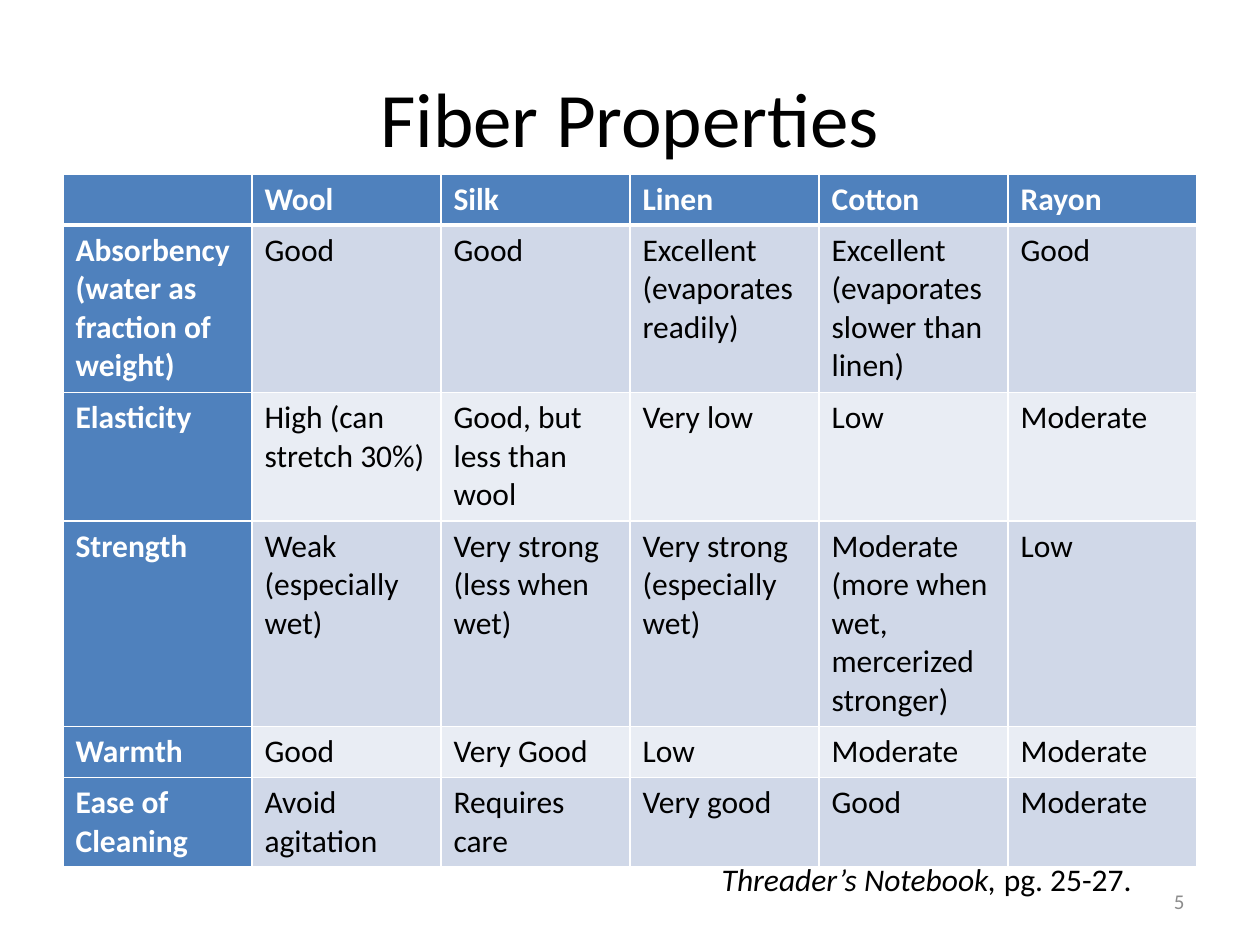
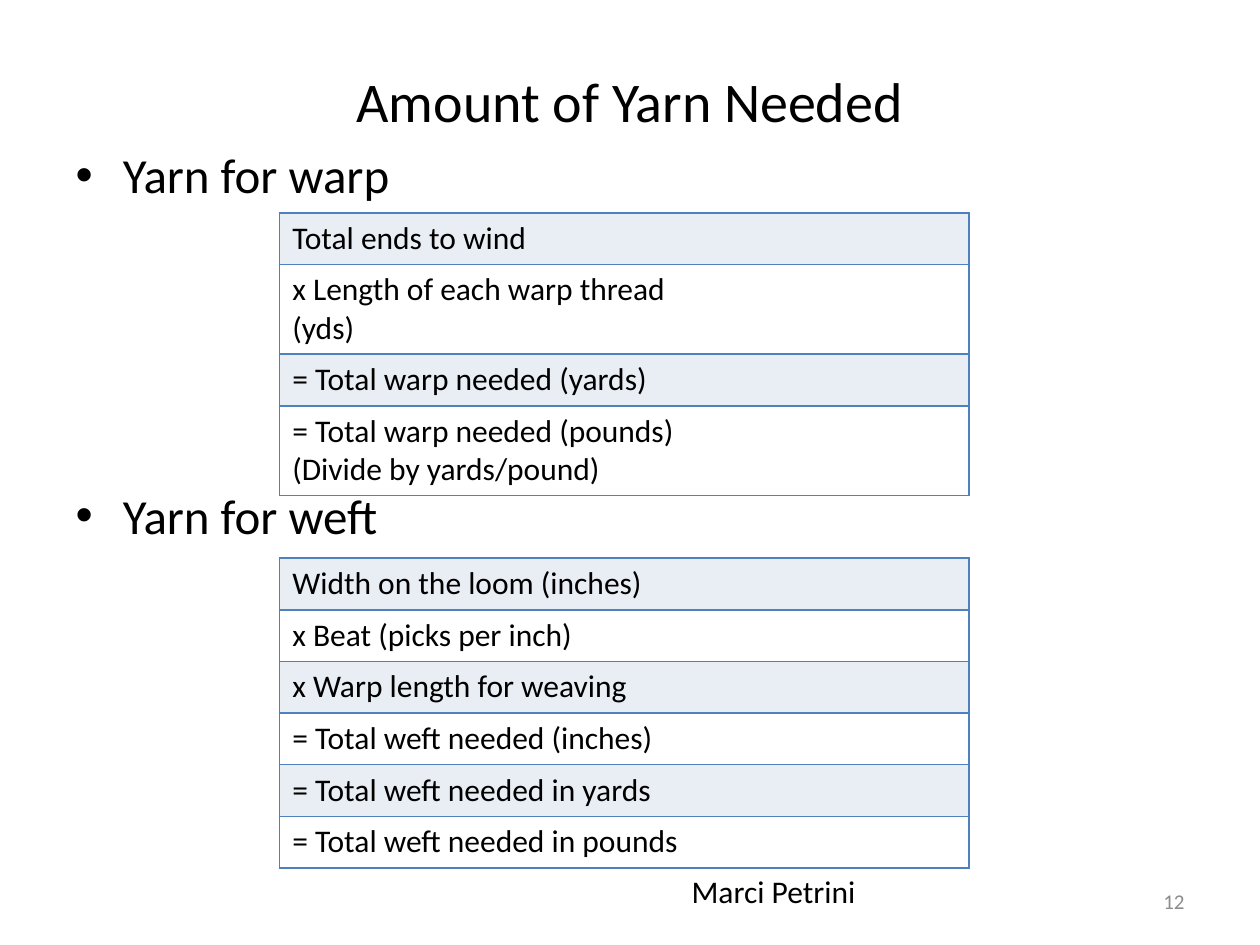
from dataclasses import dataclass

from lxml.etree import SubElement
from pptx import Presentation
from pptx.dml.color import RGBColor
from pptx.enum.text import MSO_ANCHOR, MSO_AUTO_SIZE, PP_ALIGN
from pptx.oxml.ns import qn
from pptx.slide import Slide
from pptx.table import Table, _Cell
from pptx.util import Emu, Pt

FONT = "Calibri"
BLACK = RGBColor(0x00, 0x00, 0x00)
WHITE = RGBColor(0xFF, 0xFF, 0xFF)
GRAY = RGBColor(0x8C, 0x8C, 0x8C)
BLUE = RGBColor(0x4F, 0x81, 0xBD)
BAND_DARK = RGBColor(0xD0, 0xD8, 0xE8)
BAND_LIGHT = RGBColor(0xE9, 0xED, 0xF4)

EMU_PER_PX = 9144
SLIDE_W, SLIDE_H = 1000, 750


def px(n: int) -> Emu:
    return Emu(n * EMU_PER_PX)


@dataclass(frozen=True)
class Box:
    left: int
    top: int
    width: int
    height: int

    def emu(self) -> tuple[Emu, ...]:
        return tuple(px(n) for n in (self.left, self.top, self.width, self.height))


@dataclass(frozen=True)
class Grid:
    left: int
    top: int
    cols: tuple[int, ...]
    rows: tuple[int, ...]


@dataclass(frozen=True)
class Worksheet:
    grid: Grid
    steps: tuple[str, ...]


PAGE_NUMBER_BOX = Box(717, 695, 233, 40)

PROPERTIES_GRID = Grid(50, 138, (150,) * 6, (40, 133, 102, 163, 40, 71))
PROPERTIES = (
    ("", "Wool", "Silk", "Linen", "Cotton", "Rayon"),
    ("Absorbency (water as fraction of weight)", "Good", "Good",
     "Excellent (evaporates readily)",
     "Excellent (evaporates slower than linen)", "Good"),
    ("Elasticity", "High (can stretch 30%)", "Good, but less than wool",
     "Very low", "Low", "Moderate"),
    ("Strength", "Weak (especially wet)", "Very strong (less when wet)",
     "Very strong (especially wet)",
     "Moderate (more when wet, mercerized stronger)", "Low"),
    ("Warmth", "Good", "Very Good", "Low", "Moderate", "Moderate"),
    ("Ease of Cleaning", "Avoid agitation", "Requires care", "Very good",
     "Good", "Moderate"),
)

WORKSHEETS = (
    Worksheet(
        Grid(222, 169, (342, 205), (41, 71, 41, 71)),
        ("Total ends to wind",
         "x Length of each warp thread (yds)",
         "= Total warp needed (yards)",
         "= Total warp needed (pounds) (Divide by yards/pound)"),
    ),
    Worksheet(
        Grid(222, 443, (347, 200), (41,) * 6),
        ("Width on the loom (inches)",
         "x Beat (picks per inch)",
         "x Warp length for weaving",
         "= Total weft needed (inches)",
         "= Total weft needed in yards",
         "= Total weft needed in pounds"),
    ),
)


def style(p, size: int, color: RGBColor = BLACK, bold: bool | None = None) -> None:
    p.font.name = FONT
    p.font.size = Pt(size)
    p.font.bold = bold
    p.font.color.rgb = color


def place(sp, box: Box) -> None:
    sp.left, sp.top, sp.width, sp.height = box.emu()


def set_title(s: Slide, text: str, box: Box, size: int) -> None:
    sp = s.shapes.title
    place(sp, box)
    tf = sp.text_frame
    tf.text = text
    tf.auto_size = MSO_AUTO_SIZE.NONE
    tf.vertical_anchor = MSO_ANCHOR.MIDDLE
    p = tf.paragraphs[0]
    p.alignment = PP_ALIGN.CENTER
    style(p, size)


def add_text(s: Slide, box: Box, runs: tuple[tuple[str, bool], ...],
             size: int = 18, color: RGBColor = BLACK):
    tf = s.shapes.add_textbox(*box.emu()).text_frame
    tf.word_wrap = True
    p = tf.paragraphs[0]
    for text, italic in runs:
        r = p.add_run()
        r.text = text
        r.font.italic = italic
        style(r, size, color)
    return tf


def add_page_number(s: Slide, number: int) -> None:
    tf = add_text(s, PAGE_NUMBER_BOX, ((str(number), False),), 12, GRAY)
    tf.vertical_anchor = MSO_ANCHOR.MIDDLE
    tf.paragraphs[0].alignment = PP_ALIGN.RIGHT


def add_grid(s: Slide, grid: Grid) -> Table:
    box = Box(grid.left, grid.top, sum(grid.cols), sum(grid.rows))
    table = s.shapes.add_table(len(grid.rows), len(grid.cols), *box.emu()).table
    table.first_row = table.horz_banding = False
    for col, width in zip(table.columns, grid.cols):
        col.width = px(width)
    for row, height in zip(table.rows, grid.rows):
        row.height = px(height)
    return table


def fill_cell(cell: _Cell, text: str, fill: RGBColor, color: RGBColor,
              bold: bool, line: RGBColor, widths: dict[str, int]) -> None:
    cell.text = text
    style(cell.text_frame.paragraphs[0], 18, color, bold)
    tc_pr = cell._tc.get_or_add_tcPr()
    for side in "LRTB":
        width = widths.get(side, 0)
        ln = SubElement(tc_pr, qn(f"a:ln{side}"), w=str(Pt(width)))
        if width:
            solid = SubElement(ln, qn("a:solidFill"))
            SubElement(solid, qn("a:srgbClr"), val=str(line))
        else:
            SubElement(ln, qn("a:noFill"))
    cell.fill.solid()
    cell.fill.fore_color.rgb = fill


def add_properties_table(s: Slide) -> None:
    table = add_grid(s, PROPERTIES_GRID)
    for i, row in enumerate(PROPERTIES):
        for j, text in enumerate(row):
            header = i == 0 or j == 0
            band = BAND_DARK if i % 2 else BAND_LIGHT
            widths = {"L": 1, "R": 1, "T": 3 if i == 1 else 1, "B": 1 if i else 3}
            fill_cell(table.cell(i, j), text, BLUE if header else band,
                      WHITE if header else BLACK, header, WHITE, widths)


def add_worksheet(s: Slide, sheet: Worksheet) -> None:
    table = add_grid(s, sheet.grid)
    for i, step in enumerate(sheet.steps):
        fill = WHITE if i % 2 else BAND_LIGHT
        for j, (text, outer) in enumerate(((step, "L"), ("", "R"))):
            fill_cell(table.cell(i, j), text, fill, BLACK, False, BLUE,
                      {outer: 1, "T": 1, "B": 1})


def add_fiber_slide(prs) -> None:
    s = prs.slides.add_slide(prs.slide_layouts[5])
    set_title(s, "Fiber Properties", Box(50, 30, 900, 125), 44)
    add_properties_table(s)
    add_text(s, Box(563, 678, 387, 40),
             (("Threader’s Notebook, ", True), ("pg. 25-27.", False)))
    add_page_number(s, 5)


def add_yarn_slide(prs) -> None:
    s = prs.slides.add_slide(prs.slide_layouts[1])
    set_title(s, "Amount of Yarn Needed", Box(50, 30, 900, 99), 32)
    body = s.placeholders[1]
    place(body, Box(50, 110, 900, 560))
    tf = body.text_frame
    tf.text = "Yarn for warp\nYarn for weft"
    tf.auto_size = MSO_AUTO_SIZE.NONE
    for p in tf.paragraphs:
        style(p, 28)
    tf.paragraphs[1].space_before = Pt(161)
    for sheet in WORKSHEETS:
        add_worksheet(s, sheet)
    add_text(s, Box(539, 687, 291, 40), (("Marci Petrini", False),))
    add_page_number(s, 12)


def main() -> None:
    prs = Presentation()
    prs.slide_width, prs.slide_height = px(SLIDE_W), px(SLIDE_H)
    add_fiber_slide(prs)
    add_yarn_slide(prs)
    prs.save("out.pptx")


if __name__ == "__main__":
    main()
